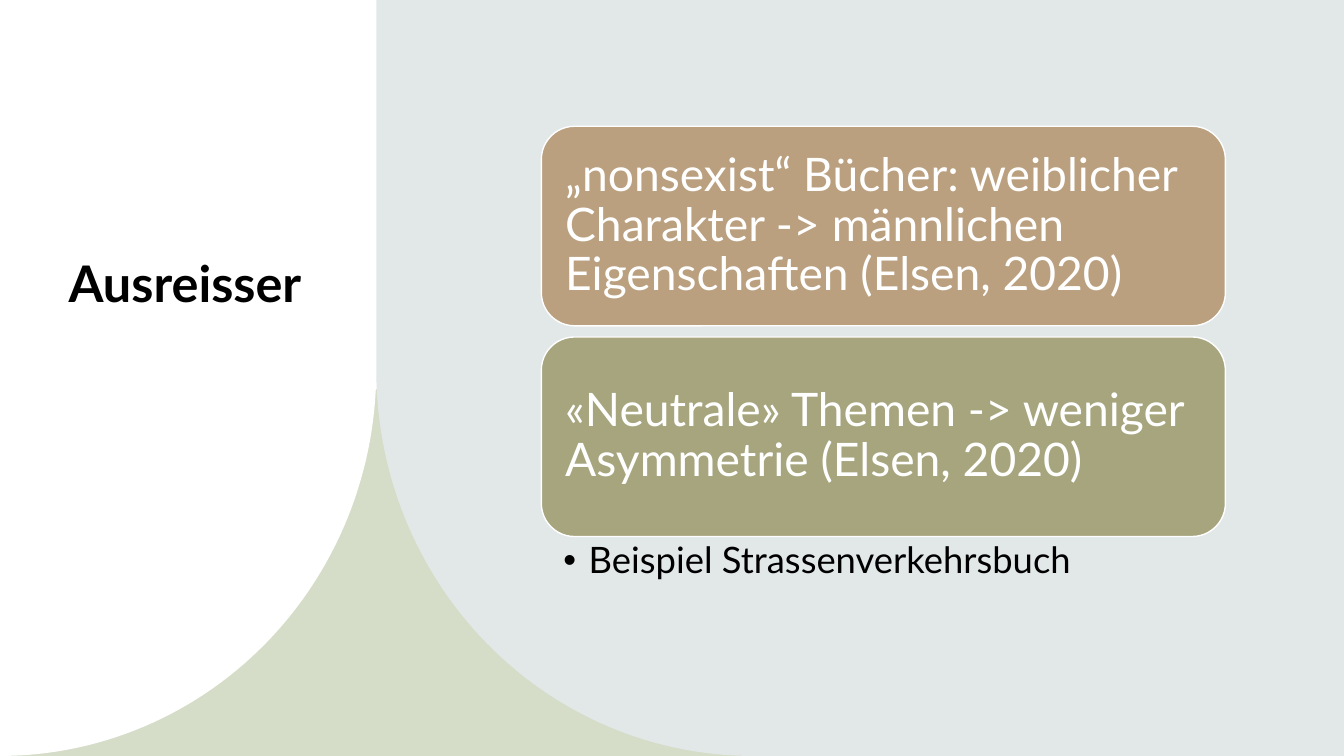
from dataclasses import dataclass
from math import cos, radians, sin

from lxml.etree import SubElement
from pptx import Presentation
from pptx.dml.color import RGBColor as Rgb
from pptx.enum.shapes import MSO_SHAPE as Preset
from pptx.enum.text import MSO_ANCHOR as Anchor, MSO_AUTO_SIZE as AutoSize, PP_ALIGN as Align
from pptx.oxml.ns import qn
from pptx.shapes.autoshape import Shape
from pptx.slide import Slide
from pptx.text.text import TextFrame
from pptx.util import Emu, Inches, Pt

WIDTH, HEIGHT = Inches(13.333), Inches(7.5)


@dataclass(frozen=True)
class Theme:
    font: str = "Lato"
    white: str = "FFFFFF"
    black: str = "000000"
    sage: str = "D5DDC8"
    mist: str = "E2E7E8"
    tan: str = "BAA07F"
    olive: str = "A6A57E"
    title_size: int = 36
    card_size: int = 33
    bullet_size: int = 26


@dataclass(frozen=True)
class Area:
    left: float
    top: float
    width: float
    height: float

    def placement(self) -> dict[str, Emu]:
        return {
            "left": across(self.left),
            "top": down(self.top),
            "width": across(self.width),
            "height": down(self.height),
        }


@dataclass(frozen=True)
class Card:
    text: str
    color: str


@dataclass(frozen=True)
class Panel:
    outer_edge: float
    arc_center: float
    start_angle: int
    color: str


THEME = Theme()
FULL_SLIDE = Area(0, 0, 100, 100)
VALLEY = Area(0, 51.5, 55.3, 48.5)
TITLE = Area(4.35, 31.87, 25.88, 36.4)
FIRST_CARD = Area(40.28, 16.7, 50.9, 26.4)
CARD_PITCH = 27.87
BULLET = Area(40.28, 71.07, 50.9, 8)
PANEL_SEAM, ARC_TOP = 28, 49
ARC_STEPS = 60

LEFT_PANEL = Panel(0, 0, 0, THEME.white)
RIGHT_PANEL = Panel(100, 2 * PANEL_SEAM, 180, THEME.mist)
CARDS = (
    Card("„nonsexist“ Bücher: weiblicher Charakter -> männlichen Eigenschaften (Elsen, 2020)", THEME.tan),
    Card("«Neutrale» Themen -> weniger Asymmetrie (Elsen, 2020)", THEME.olive),
)


def across(percent: float) -> Emu:
    return Emu(round(WIDTH * percent / 100))


def down(percent: float) -> Emu:
    return Emu(round(HEIGHT * percent / 100))


def apply(target: object, values: dict[str, object]) -> None:
    for attribute, value in values.items():
        setattr(target, attribute, value)


def paint(shape: Shape, color: str) -> None:
    shape.shadow.inherit = False
    shape.fill.solid()
    shape.fill.fore_color.rgb = Rgb.from_string(color)
    shape.line.fill.background()


def write(frame: TextFrame, text: str, size: int, color: str, spacing: float,
          anchor: Anchor, insets: tuple[float, float, float], bold: bool = False) -> None:
    left, vertical, right = insets
    apply(frame, {
        "text": text,
        "word_wrap": True,
        "auto_size": AutoSize.NONE,
        "vertical_anchor": anchor,
        "margin_left": Inches(left),
        "margin_right": Inches(right),
        "margin_top": Inches(vertical),
        "margin_bottom": Inches(vertical),
    })
    paragraph = frame.paragraphs[0]
    apply(paragraph, {"alignment": Align.LEFT, "line_spacing": spacing})
    font = paragraph.runs[0].font
    apply(font, {"name": THEME.font, "size": Pt(size), "bold": bold})
    font.color.rgb = Rgb.from_string(color)


def add_block(slide: Slide, preset: Preset, area: Area, color: str) -> Shape:
    block = slide.shapes.add_shape(preset, **area.placement())
    paint(block, color)
    return block


def add_panel(slide: Slide, panel: Panel) -> None:
    turn = 90 - panel.start_angle
    angles = [radians(panel.start_angle + turn * step / ARC_STEPS) for step in range(ARC_STEPS + 1)]
    arc = [
        (across(panel.arc_center + PANEL_SEAM * cos(angle)), down(ARC_TOP + (100 - ARC_TOP) * sin(angle)))
        for angle in angles
    ]
    outline = slide.shapes.build_freeform(across(panel.outer_edge), 0)
    outline.add_line_segments([(across(PANEL_SEAM), 0), *arc, (across(panel.outer_edge), HEIGHT)])
    paint(outline.convert_to_shape(), panel.color)


def add_title(slide: Slide) -> None:
    title = slide.shapes.title
    apply(title, TITLE.placement())
    write(title.text_frame, "Ausreisser", THEME.title_size, THEME.black, 1.1,
          Anchor.TOP, (0.1, 0.05, 0.1), bold=True)
    slide.shapes._spTree.append(title._element)


def add_card(slide: Slide, card: Card, row: int) -> None:
    area = Area(FIRST_CARD.left, FIRST_CARD.top + row * CARD_PITCH, FIRST_CARD.width, FIRST_CARD.height)
    block = add_block(slide, Preset.ROUNDED_RECTANGLE, area, card.color)
    block.line.color.rgb = Rgb.from_string(THEME.white)
    block.line.width = Pt(1)
    write(block.text_frame, card.text, THEME.card_size, THEME.white, 0.9,
          Anchor.MIDDLE, (0.14, 0.14, 0.14))


def add_bullet(slide: Slide) -> None:
    example = slide.shapes.add_textbox(**BULLET.placement())
    write(example.text_frame, "Beispiel Strassenverkehrsbuch", THEME.bullet_size, THEME.black, 0.9,
          Anchor.TOP, (0.22, 0.05, 0.26))
    paragraph = example.text_frame.paragraphs[0]
    paragraph.level = 1
    properties = paragraph._p.get_or_add_pPr()
    properties.set("marL", str(Inches(0.25)))
    properties.set("indent", str(Inches(-0.25)))
    SubElement(properties, qn("a:buFont"), typeface="Arial")
    SubElement(properties, qn("a:buChar"), char="•")


def main() -> None:
    deck = Presentation()
    apply(deck, {"slide_width": WIDTH, "slide_height": HEIGHT})
    slide = deck.slides.add_slide(deck.slide_layouts[5])
    add_block(slide, Preset.RECTANGLE, FULL_SLIDE, THEME.white)
    add_block(slide, Preset.RECTANGLE, VALLEY, THEME.sage)
    add_panel(slide, LEFT_PANEL)
    add_title(slide)
    add_panel(slide, RIGHT_PANEL)
    for row, card in enumerate(CARDS):
        add_card(slide, card, row)
    add_bullet(slide)
    deck.save("out.pptx")


if __name__ == "__main__":
    main()
